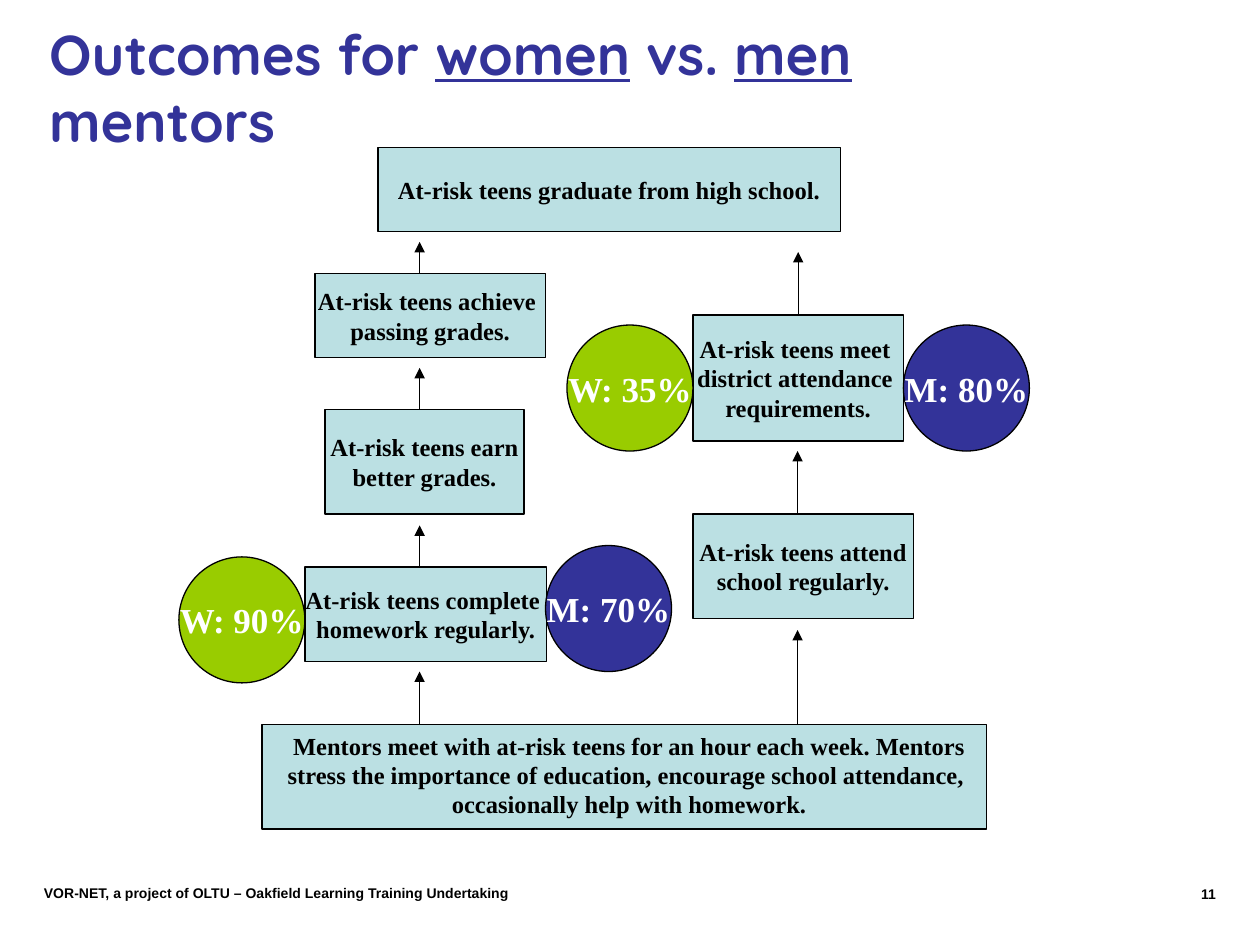
from lxml import etree
from pptx import Presentation
from pptx.dml.color import RGBColor
from pptx.enum import shapes, text
from pptx.oxml import ns
from pptx.util import Inches, Pt

INDIGO = RGBColor(0x33, 0x33, 0x99)
LIME = RGBColor(0x99, 0xCC, 0x00)
PALE_TEAL = RGBColor(0xBB, 0xE0, 0xE3)
BLACK = RGBColor(0, 0, 0)
WHITE = RGBColor(0xFF, 0xFF, 0xFF)

BOX_FONT = {"name": "Times New Roman", "size": Pt(14), "bold": True}
CIRCLE_FONT = {"name": "Times New Roman", "size": Pt(20), "bold": True}
FOOTER_FONT = {"name": "Arial", "size": Pt(8), "bold": True}
TITLE_FONT = {"name": "Quicksand", "size": Pt(32), "bold": True}

LEFT_CHAIN, RIGHT_CHAIN = 3.33, 6.33
CIRCLE_SIZE = 1

# Name: (left, top, width, height), lines of text
STEPS = {
    "homework": ((2.42, 4.5, 1.92, 0.75), ["At-risk teens complete ", "homework regularly."]),
    "better grades": ((2.58, 3.25, 1.58, 0.83), ["At-risk teens earn", "better grades."]),
    "passing grades": ((2.5, 2.17, 1.83, 0.67), ["At-risk teens achieve ", "passing grades."]),
    "school": ((5.5, 4.08, 1.75, 0.83), ["At-risk teens attend", "school regularly."]),
    "attendance": ((5.5, 2.5, 1.67, 1),
                   ["At-risk teens meet ", "district attendance ", "requirements."]),
    "graduation": ((3, 1.17, 3.67, 0.67), ["At-risk teens graduate from high school."]),
}
MENTORING_BOX = (2.08, 5.75, 5.75, 0.83)
MENTORING_TEXT = [
    "Mentors meet with at-risk teens for an hour each week. Mentors stress the "
    "importance of education, encourage school attendance, ",
    "occasionally help with homework.",
]

# Chain position, step the arrow leaves, height of its tip
ARROWS = [
    (LEFT_CHAIN, "mentoring", 5.33),
    (LEFT_CHAIN, "homework", 4.17),
    (LEFT_CHAIN, "better grades", 2.92),
    (RIGHT_CHAIN, "mentoring", 5),
    (RIGHT_CHAIN, "school", 3.58),
    (RIGHT_CHAIN, "attendance", 2),
    (LEFT_CHAIN, "passing grades", 1.92),
]

# Left, top, fill, label
RESULTS = [
    (1.42, 4.42, LIME, "W: 90%"),
    (4.33, 4.33, INDIGO, "M: 70%"),
    (4.5, 2.58, LIME, "W: 35%"),
    (7.17, 2.58, INDIGO, "M: 80%"),
]


def inches(box):
    return [Inches(value) for value in box]


def format_font(font, values, color):
    for name, value in values.items():
        setattr(font, name, value)
    font.color.rgb = color


def write_lines(frame, lines, font, color, alignment, wrap=True):
    frame.word_wrap = wrap
    for index, line in enumerate(lines):
        paragraph = frame.add_paragraph() if index else frame.paragraphs[0]
        paragraph.alignment = alignment
        run = paragraph.add_run()
        run.text = line
        format_font(run.font, font, color)


def add_text(slide, box, lines, font, alignment):
    text_box = slide.shapes.add_textbox(*inches(box))
    write_lines(text_box.text_frame, lines, font, BLACK, alignment)


def add_outlined(slide, kind, box, fill, lines=(), font=None, color=BLACK):
    shape = slide.shapes.add_shape(kind, *inches(box))
    shape.shadow.inherit = False
    shape.fill.solid()
    shape.fill.fore_color.rgb = fill
    shape.line.color.rgb = BLACK
    shape.line.width = Pt(0.75)
    shape.text_frame.vertical_anchor = text.MSO_ANCHOR.MIDDLE
    write_lines(shape.text_frame, lines, font, color, text.PP_ALIGN.CENTER, wrap=False)
    return shape


def add_arrow(slide, x, start_shape, tip):
    x = Inches(x)
    arrow = slide.shapes.add_connector(
        shapes.MSO_CONNECTOR.STRAIGHT, x, start_shape.top, x, Inches(tip))
    # Join only where the chain runs through the middle of the box
    middle = start_shape.left + start_shape.width // 2
    if abs(middle - x) < Inches(0.01):
        arrow.begin_connect(start_shape, 0)
        arrow.end_x = arrow.begin_x
    arrow.line.color.rgb = BLACK
    arrow.line.width = Pt(0.75)
    etree.SubElement(arrow.line._get_or_add_ln(), ns.qn("a:tailEnd"), type="triangle")
    etree.SubElement(arrow._element.spPr, ns.qn("a:effectLst"))


def add_title(slide, box):
    title = slide.shapes.title
    title.left, title.top, title.width, title.height = inches(box)
    frame = title.text_frame
    frame.auto_size = text.MSO_AUTO_SIZE.NONE
    frame.vertical_anchor = text.MSO_ANCHOR.MIDDLE
    paragraph = frame.paragraphs[0]
    paragraph.alignment = text.PP_ALIGN.LEFT
    for index, part in enumerate(["Outcomes for ", "women", " vs. ", "men", " mentors"]):
        run = paragraph.add_run()
        run.text = part
        format_font(run.font, TITLE_FONT, INDIGO)
        run.font.underline = index % 2 == 1


def add_outcome_chains(slide):
    rectangle = shapes.MSO_SHAPE.RECTANGLE
    # Mentoring at the base
    boxes = {"mentoring": add_outlined(slide, rectangle, MENTORING_BOX, PALE_TEAL)}
    left, top, width, height = MENTORING_BOX
    add_text(slide, (left, top, width + 0.08, height), MENTORING_TEXT,
             BOX_FONT, text.PP_ALIGN.CENTER)
    # Steps up to graduation
    for name, (box, lines) in STEPS.items():
        boxes[name] = add_outlined(slide, rectangle, box, PALE_TEAL, lines, BOX_FONT)
    for x, start, tip in ARROWS:
        add_arrow(slide, x, boxes[start], tip)
    # Results for women and men mentors
    for left, top, fill, label in RESULTS:
        add_outlined(slide, shapes.MSO_SHAPE.OVAL, (left, top, CIRCLE_SIZE, CIRCLE_SIZE),
                     fill, [label], CIRCLE_FONT, WHITE)


def add_footer(slide):
    add_text(slide, (9.08, 6.98, 0.67, 0.27), ["11"], FOOTER_FONT, text.PP_ALIGN.RIGHT)
    add_text(slide, (0.25, 6.97, 5, 0.23),
             ["VOR-NET, a project of OLTU – Oakfield Learning Training Undertaking"],
             FOOTER_FONT, text.PP_ALIGN.LEFT)


def main():
    presentation = Presentation()
    presentation.slide_width, presentation.slide_height = Inches(10), Inches(7.5)
    slide = presentation.slides.add_slide(presentation.slide_layouts.get_by_name("Title Only"))
    add_footer(slide)
    add_title(slide, (0.29, 0.25, 8.42, 0.87))
    add_outcome_chains(slide)
    presentation.save("out.pptx")


if __name__ == "__main__":
    main()
